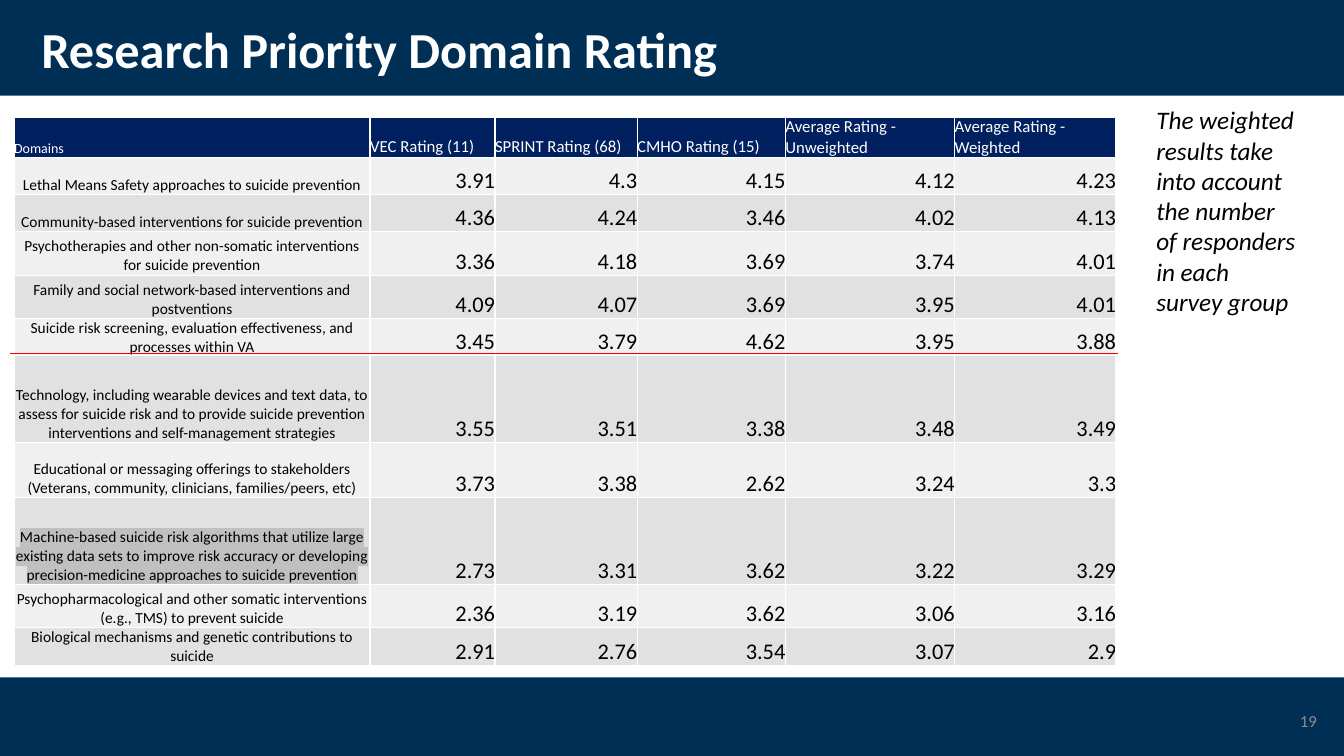
"""Build the slide that rates research priority domains by survey group."""
from lxml.etree import SubElement
from pptx import Presentation
from pptx.dml.color import RGBColor
from pptx.enum.shapes import MSO_CONNECTOR, MSO_SHAPE
from pptx.enum.text import MSO_ANCHOR, MSO_AUTO_SIZE, PP_ALIGN
from pptx.oxml import parse_xml
from pptx.oxml.ns import nsdecls, qn
from pptx.util import Inches, Pt

TITLE = "Research Priority Domain Rating"
NOTE = "The weighted results take into account the number of responders in each survey group"
PAGE = "19"
HEADERS = ("Domains", "VEC Rating (11)", "SPRINT Rating (68)", "CMHO Rating (15)",
           "Average Rating - Unweighted", "Average Rating - Weighted")
RATINGS = (
    ("Lethal Means Safety approaches to suicide prevention",
     "3.91", "4.3", "4.15", "4.12", "4.23"),
    ("Community-based interventions for suicide prevention",
     "4.36", "4.24", "3.46", "4.02", "4.13"),
    ("Psychotherapies and other non-somatic interventions for suicide prevention",
     "3.36", "4.18", "3.69", "3.74", "4.01"),
    ("Family and social network-based interventions and postventions",
     "4.09", "4.07", "3.69", "3.95", "4.01"),
    ("Suicide risk screening, evaluation effectiveness, and processes within VA",
     "3.45", "3.79", "4.62", "3.95", "3.88"),
    ("Technology, including wearable devices and text data, to assess for suicide risk and "
     "to provide suicide prevention interventions and self-management strategies",
     "3.55", "3.51", "3.38", "3.48", "3.49"),
    ("Educational or messaging offerings to stakeholders "
     "(Veterans, community, clinicians, families/peers, etc)",
     "3.73", "3.38", "2.62", "3.24", "3.3"),
    ("Machine-based suicide risk algorithms that utilize large existing data sets to improve "
     "risk accuracy or developing precision-medicine approaches to suicide prevention",
     "2.73", "3.31", "3.62", "3.22", "3.29"),
    ("Psychopharmacological and other somatic interventions (e.g., TMS) to prevent suicide",
     "2.36", "3.19", "3.62", "3.06", "3.16"),
    ("Biological mechanisms and genetic contributions to suicide",
     "2.91", "2.76", "3.54", "3.07", "2.9"),
)
HIGHLIGHTED = "Machine-based"
COLUMNS = (3.53, 1.24, 1.41, 1.47, 1.68, 1.6)
ROWS = (0.4, 0.37, 0.37, 0.43, 0.43, 0.37, 0.86, 0.55, 0.86, 0.43, 0.37)
TABLE_LEFT, TABLE_TOP = 0.14, 1.16
CUTOFF_Y = 3.51
WIDTH, HEIGHT = 13.33, 7.5
BANDS = ((0, 0.95), (6.72, 0.8))

FONT = "Calibri"
NAVY = RGBColor(0x00, 0x2F, 0x56)
HEADER_BLUE = RGBColor(0x00, 0x20, 0x60)
STRIPES = (RGBColor(0xE1, 0xE1, 0xE1), RGBColor(0xF0, 0xF0, 0xF0))
WHITE = RGBColor(0xFF, 0xFF, 0xFF)
BLACK = RGBColor(0x00, 0x00, 0x00)
GREY = RGBColor(0x8C, 0x8C, 0x8C)
MARKER = RGBColor(0xC0, 0xC0, 0xC0)
RED = RGBColor(0xFF, 0x00, 0x00)


def write(frame, text, size, color, align=PP_ALIGN.LEFT, bold=False, italic=False):
    frame.text = text
    frame.word_wrap = True
    paragraph = frame.paragraphs[0]
    paragraph.alignment = align
    font = paragraph.runs[0].font
    font.name, font.size, font.bold, font.italic = FONT, Pt(size), bold, italic
    font.color.rgb = color
    return paragraph


def highlight(run):
    fill = run.font._element.find(qn("a:solidFill"))
    fill.addnext(parse_xml(f'<a:highlight {nsdecls("a")}><a:srgbClr val="{MARKER}"/></a:highlight>'))


def add_borders(cell):
    properties = cell._tc.get_or_add_tcPr()
    for place, side in enumerate("LRTB"):
        properties.insert(place, parse_xml(
            f'<a:ln{side} {nsdecls("a")} w="{Pt(1)}"><a:solidFill>'
            f'<a:srgbClr val="{WHITE}"/></a:solidFill></a:ln{side}>'))


def add_bands(slide):
    for place, (top, height) in enumerate(BANDS):
        band = slide.shapes.add_shape(MSO_SHAPE.RECTANGLE, 0, Inches(top),
                                      Inches(WIDTH), Inches(height))
        band.shadow.inherit = False
        band.fill.solid()
        band.fill.fore_color.rgb = NAVY
        band.line.fill.background()
        slide.shapes._spTree.insert(2 + place, band._element)


def add_title(slide):
    title = slide.shapes.title
    title.left, title.top, title.width, title.height = map(Inches, (0.31, 0.18, 11.5, 0.68))
    write(title.text_frame, TITLE, 36, WHITE, bold=True).line_spacing = 0.9
    title.text_frame.vertical_anchor = MSO_ANCHOR.MIDDLE
    title.text_frame.auto_size = MSO_AUTO_SIZE.NONE


def add_ratings(slide):
    table = slide.shapes.add_table(len(ROWS), len(COLUMNS), Inches(TABLE_LEFT), Inches(TABLE_TOP),
                                   Inches(sum(COLUMNS)), Inches(sum(ROWS))).table
    for column, width in zip(table.columns, COLUMNS):
        column.width = Inches(width)
    for row, height in zip(table.rows, ROWS):
        row.height = Inches(height)
    for r, entries in enumerate((HEADERS, *RATINGS)):
        for c, entry in enumerate(entries):
            cell = table.cell(r, c)
            cell.margin_left = cell.margin_right = cell.margin_top = cell.margin_bottom = 0
            cell.vertical_anchor = MSO_ANCHOR.BOTTOM
            cell.fill.solid()
            cell.fill.fore_color.rgb = STRIPES[r % 2] if r else HEADER_BLUE
            add_borders(cell)
            if r == 0:
                write(cell.text_frame, entry, 12 if c else 10, WHITE)
            elif c == 0:
                domain = write(cell.text_frame, entry, 11, BLACK, PP_ALIGN.CENTER)
                if entry.startswith(HIGHLIGHTED):
                    highlight(domain.runs[0])
            else:
                write(cell.text_frame, entry, 16, BLACK, PP_ALIGN.RIGHT)


def add_cutoff(slide):
    overhang = 0.02
    cutoff = slide.shapes.add_connector(
        MSO_CONNECTOR.STRAIGHT, Inches(TABLE_LEFT - 2 * overhang), Inches(CUTOFF_Y),
        Inches(TABLE_LEFT + sum(COLUMNS) + overhang), Inches(CUTOFF_Y))
    cutoff.line.color.rgb = RED
    cutoff.line.width = Pt(0.5)
    SubElement(cutoff._element.spPr, qn("a:effectLst"))


def main():
    deck = Presentation()
    deck.slide_width, deck.slide_height = Inches(WIDTH), Inches(HEIGHT)
    slide = deck.slides.add_slide(deck.slide_layouts[5])
    add_bands(slide)
    add_title(slide)
    page = slide.shapes.add_textbox(*map(Inches, (10.16, 6.95, 3, 0.4))).text_frame
    write(page, PAGE, 12, GREY, PP_ALIGN.RIGHT)
    page.vertical_anchor = MSO_ANCHOR.MIDDLE
    note = slide.shapes.add_textbox(*map(Inches, (11.37, 0.99, 1.59, 2.52))).text_frame
    write(note, NOTE, 18, BLACK, italic=True)
    note.auto_size = MSO_AUTO_SIZE.SHAPE_TO_FIT_TEXT
    add_ratings(slide)
    add_cutoff(slide)
    deck.save("out.pptx")


if __name__ == "__main__":
    main()
